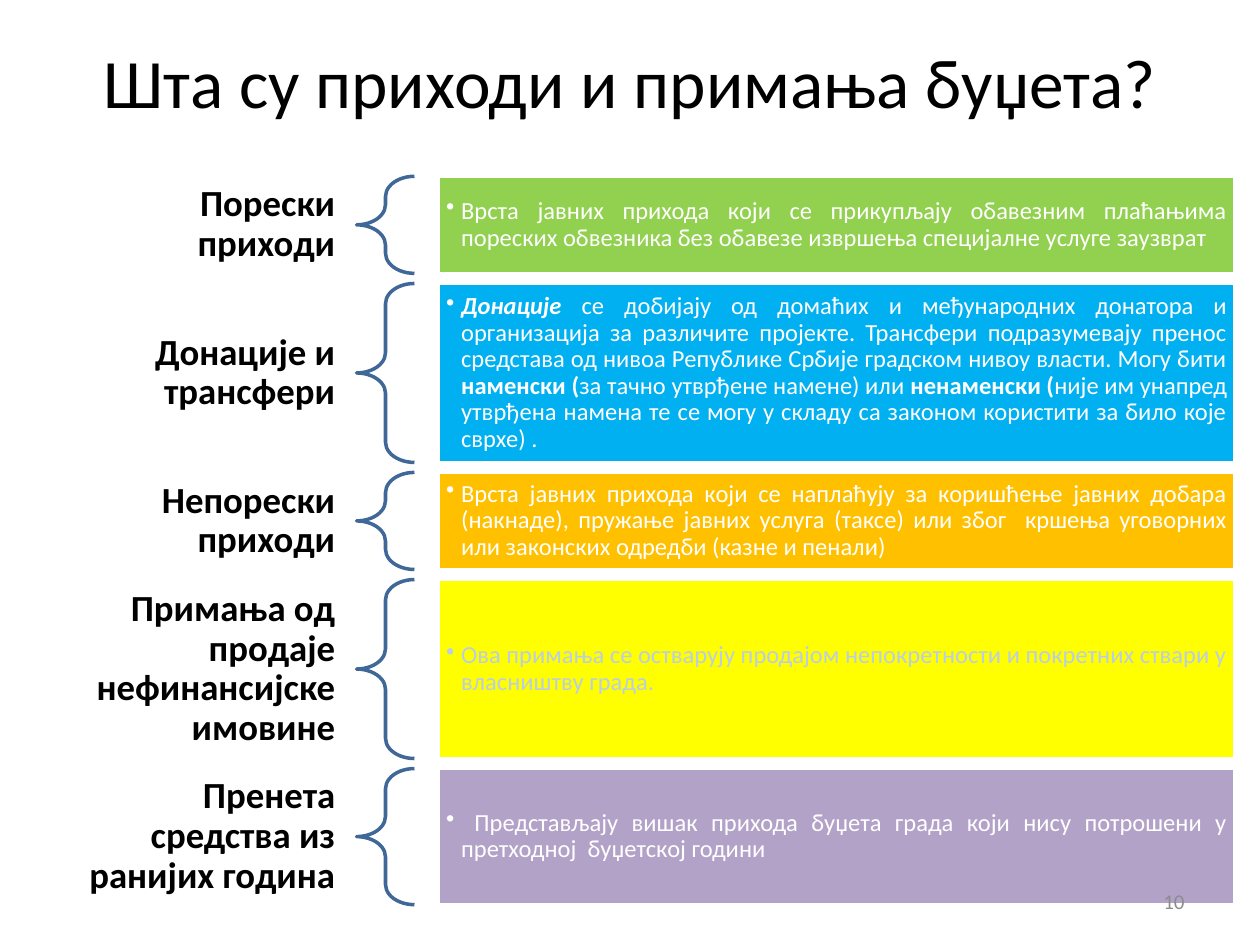
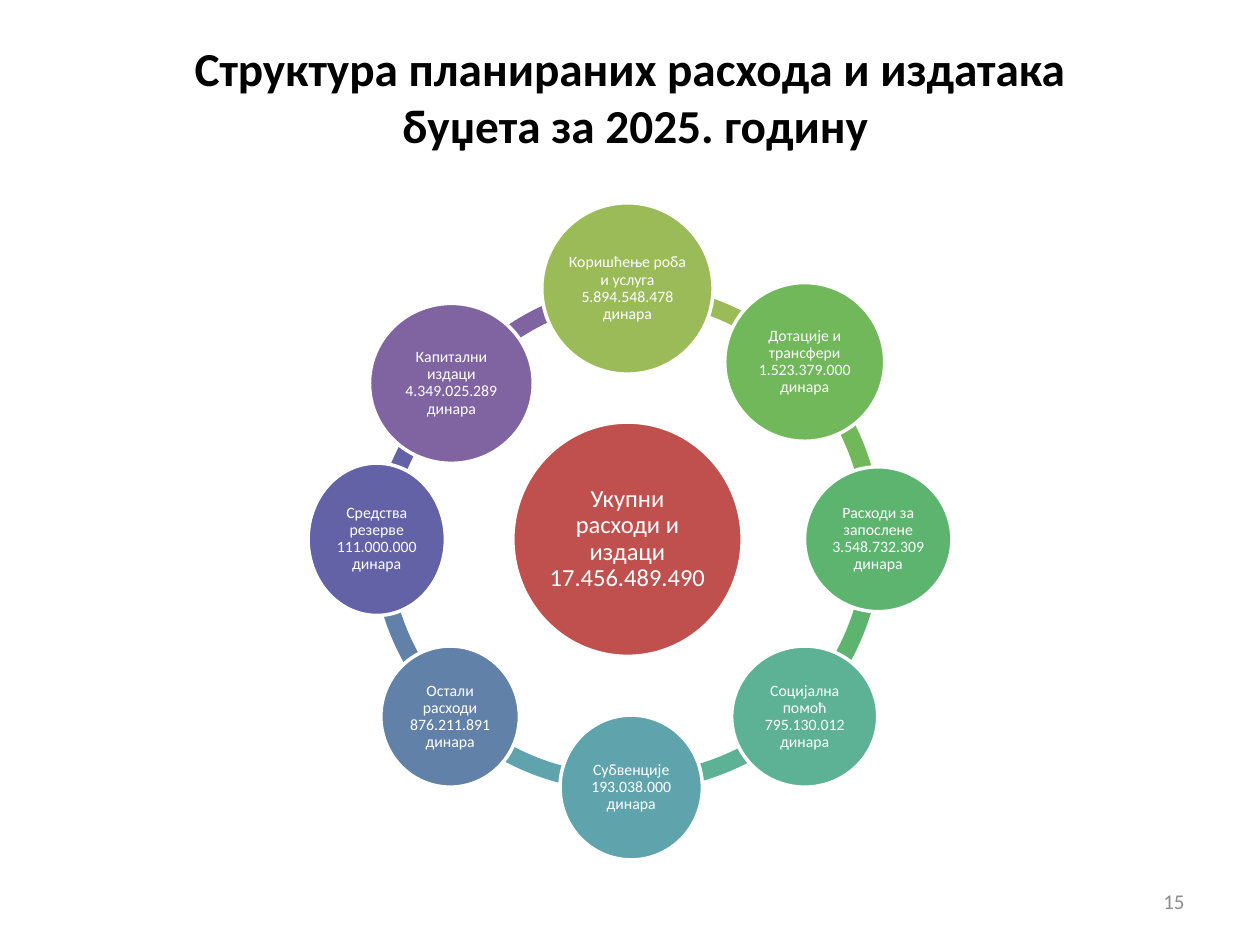
from dataclasses import dataclass
from math import cos, radians, sin

from lxml.etree import SubElement
from pptx import Presentation
from pptx.dml.color import RGBColor
from pptx.enum.lang import MSO_LANGUAGE_ID
from pptx.enum.shapes import MSO_SHAPE
from pptx.enum.text import MSO_ANCHOR, PP_ALIGN
from pptx.oxml.ns import qn
from pptx.shapes.autoshape import Shape
from pptx.slide import Slide
from pptx.util import Inches, Pt

FONT = "Calibri"
WHITE, BLACK, GREY = "FFFFFF", "000000", "8C8C8C"
BRACE_BLUE, TOTAL_RED = "3F6797", "C0504D"


@dataclass
class Segment:
    text: str
    bold: bool = False
    italic: bool = False


@dataclass
class RevenueBand:
    label: str
    description: list[Segment]
    height: float
    fill: str
    text_color: str = WHITE


@dataclass
class ExpenseCircle:
    label: str
    fill: str
    width: float
    height: float
    shift: tuple[float, float] = (0, 0)
    arc_shift: tuple[float, float] = (0, 0)
    arc_angles: tuple[float, float] | None = None


REVENUE_BANDS = [
    RevenueBand("Порески приходи", [Segment(
        "Врста јавних прихода који се прикупљају обавезним плаћањима пореских "
        "обвезника без обавезе извршења специјалне услуге заузврат")], 0.77, "92D050"),
    RevenueBand("Донације и трансфери", [
        Segment("Донације ", bold=True, italic=True),
        Segment("се добијају од домаћих и међународних донатора и организација за "
                "различите пројекте. Трансфери подразумевају пренос средстава од нивоа "
                "Републике Србије градском нивоу власти. Могу бити "),
        Segment("наменски (", bold=True),
        Segment("за тачно утврђене намене) или "),
        Segment("ненаменски (", bold=True),
        Segment("није им унапред утврђена намена те се могу у складу са законом "
                "користити за било које сврхе) ."),
    ], 1.42, "00B0F0"),
    RevenueBand("Непорески приходи", [Segment(
        "Врста јавних прихода који се наплаћују за коришћење јавних добара (накнаде), "
        "пружање јавних услуга (таксе) или због  кршења уговорних или законских "
        "одредби (казне и пенали)")], 0.77, "FFC000"),
    RevenueBand("Примања од продаје нефинансијске имовине", [Segment(
        "Ова примања се остварују продајом непокретности и покретних ствари у "
        "власништву града.")], 1.42, "FFFF00", "B9CDE5"),
    RevenueBand("Пренета средства из ранијих година", [Segment(
        " Представљају вишак прихода буџета града који нису потрошени у претходној  "
        "буџетској години")], 1.08, "B3A2C7"),
]

# Clockwise from the top; each arc leads to the next circle
EXPENSE_CIRCLES = [
    ExpenseCircle("Коришћење роба и услуга 5.894.548.478 динара", "9BBB59", 1.36, 1.36),
    ExpenseCircle("Дотације и трансфери 1.523.379.000 динара", "70B85A", 1.27, 1.26),
    ExpenseCircle("Расходи за запослене 3.548.732.309 динара", "5CB46F", 1.17, 1.15),
    ExpenseCircle("Социјална помоћ 795.130.012 динара", "5DB195", 1.16, 1.12,
                  arc_shift=(0.03, -0.02), arc_angles=(45.93, 89.8)),
    ExpenseCircle("Субвенције 193.038.000 динара", "5FA4AD", 1.13, 1.15, shift=(0.03, -0.02),
                  arc_shift=(-0.02, -0.02), arc_angles=(88.5, 134.1)),
    ExpenseCircle("Остали расходи 876.211.891 динара", "6181A9", 1.1, 1.12),
    ExpenseCircle("Средства резерве 111.000.000 динара", "6362A6", 1.09, 1.21,
                  arc_shift=(-0.01, 0.2), arc_angles=(185.81, 225.94)),
    ExpenseCircle("Капитални издаци 4.349.025.289 динара", "8064A2", 1.3, 1.27,
                  shift=(0.01, 0.17), arc_shift=(0.18, -0.01), arc_angles=(217.83, 264.88)),
]


def color(value: str) -> RGBColor:
    return RGBColor.from_string(value)


def write_text(shape: Shape, text: str | list[Segment], *, size: float, text_color: str = BLACK,
               bold: bool = False, align: PP_ALIGN = PP_ALIGN.CENTER, spacing: float = 1.0,
               insets: tuple[float, float] = (0.1, 0.05), bullet: bool = False) -> None:
    """Fill a shape with one paragraph; a newline becomes a line break."""
    frame = shape.text_frame
    frame.word_wrap = True
    frame.vertical_anchor = MSO_ANCHOR.MIDDLE
    frame.margin_left = frame.margin_right = Inches(insets[0])
    frame.margin_top = frame.margin_bottom = Inches(insets[1])
    paragraph = frame.paragraphs[0]
    paragraph.alignment = align
    paragraph.line_spacing = spacing
    segments = [Segment(text, bold)] if isinstance(text, str) else text
    for segment in segments:
        for index, line in enumerate(segment.text.split("\n")):
            if index:
                paragraph.add_line_break()
            run = paragraph.add_run()
            run.text = line
            font = run.font
            font.name, font.size = FONT, Pt(size)
            font.bold, font.italic = segment.bold, segment.italic
            font.color.rgb = color(text_color)
            font.language_id = MSO_LANGUAGE_ID.SERBIAN_CYRILLIC
    if bullet:
        properties = paragraph._p.get_or_add_pPr()
        properties.set("marL", str(Inches(0.12)))
        properties.set("indent", str(Inches(-0.12)))
        SubElement(properties, qn("a:buChar")).set("char", "•")


def add_text_box(slide: Slide, left: float, top: float, width: float, height: float,
                 text: str, **text_format) -> None:
    box = slide.shapes.add_textbox(Inches(left), Inches(top), Inches(width), Inches(height))
    write_text(box, text, **text_format)


def add_preset(slide: Slide, kind: MSO_SHAPE, left: float, top: float, width: float,
               height: float, *, fill: str | None = None, line: str | None = None) -> Shape:
    shape = slide.shapes.add_shape(kind, Inches(left), Inches(top), Inches(width), Inches(height))
    shape.shadow.inherit = False
    if fill:
        shape.fill.solid()
        shape.fill.fore_color.rgb = color(fill)
    else:
        shape.fill.background()
    if line:
        shape.line.color.rgb = color(line)
        shape.line.width = Pt(2)
    else:
        shape.line.fill.background()
    return shape


def add_slide(presentation: Presentation, title: str, title_height: float, title_size: float,
              bold: bool = False) -> Slide:
    slide = presentation.slides.add_slide(presentation.slide_layouts[6])
    add_text_box(slide, 0.5, 0.3, 9, title_height, title, size=title_size, bold=bold)
    return slide


def add_page_number(slide: Slide, number: int) -> None:
    add_text_box(slide, 7.17, 6.95, 2.33, 0.4, str(number), size=12, text_color=GREY,
                 align=PP_ALIGN.RIGHT)


def add_revenue_bands(slide: Slide) -> None:
    top, gap = 1.4, 0.08
    for band in REVENUE_BANDS:
        add_text_box(slide, 0.5, top, 2.32, band.height, band.label, size=21, bold=True,
                     align=PP_ALIGN.RIGHT, spacing=0.9, insets=(0.16, 0.06))
        brace = add_preset(slide, MSO_SHAPE.LEFT_BRACE, 2.83, top, 0.46, band.height,
                           line=BRACE_BLUE)
        brace.adjustments[0] = 0.35
        panel = add_preset(slide, MSO_SHAPE.RECTANGLE, 3.48, top, 6.32, band.height,
                           fill=band.fill, line=WHITE)
        write_text(panel, band.description, size=14, text_color=band.text_color,
                   align=PP_ALIGN.JUSTIFY, spacing=0.9, insets=(0.06, 0.06), bullet=True)
        top += band.height + gap


def add_circle(slide: Slide, center_x: float, center_y: float, width: float, height: float,
               fill: str, label: str, size: float, inset: float) -> None:
    circle = add_preset(slide, MSO_SHAPE.OVAL, center_x - width / 2, center_y - height / 2,
                        width, height, fill=fill, line=WHITE)
    write_text(circle, label, size=size, text_color=WHITE, spacing=0.9, insets=(inset, inset))


def add_expense_ring(slide: Slide) -> None:
    center_x, center_y, radius, arc_size = 4.98, 4.28, 1.99, 4.05
    step = 360 / len(EXPENSE_CIRCLES)
    angles = [(270 + index * step) % 360 for index in range(len(EXPENSE_CIRCLES))]

    # Arcs lie behind the circles
    for angle, item in reversed(list(zip(angles, EXPENSE_CIRCLES))):
        start, end = item.arc_angles or (angle, (angle + step) % 360)
        arc = add_preset(slide, MSO_SHAPE.BLOCK_ARC, 2.95 + item.arc_shift[0],
                         2.25 + item.arc_shift[1], arc_size, arc_size, fill=item.fill)
        # One degree is 0.6 of an adjustment unit
        arc.adjustments[0] = start * 0.6
        arc.adjustments[1] = end * 0.6
        arc.adjustments[2] = 0.034

    # Total in the middle, then the circles around it
    add_circle(slide, center_x, center_y, 1.82, 1.86, TOTAL_RED,
               "Укупни расходи и издаци 17.456.489.490", 14, 0.02)
    for angle, item in zip(angles, EXPENSE_CIRCLES):
        add_circle(slide, center_x + radius * cos(radians(angle)) + item.shift[0],
                   center_y + radius * sin(radians(angle)) + item.shift[1],
                   item.width, item.height, item.fill, item.label, 9, 0.01)


def main() -> None:
    presentation = Presentation()
    presentation.slide_width, presentation.slide_height = Inches(10), Inches(7.5)

    # Revenue kinds
    revenue_slide = add_slide(presentation, "Шта су приходи и примања буџета?", 0.68, 39.6)
    add_revenue_bands(revenue_slide)
    add_page_number(revenue_slide, 10)

    # Expense structure
    expense_slide = add_slide(
        presentation, "Структура планираних расхода и издатака\n буџета за 2025. годину",
        0.93, 27, bold=True)
    add_page_number(expense_slide, 15)
    add_expense_ring(expense_slide)

    presentation.save("out.pptx")


if __name__ == "__main__":
    main()
